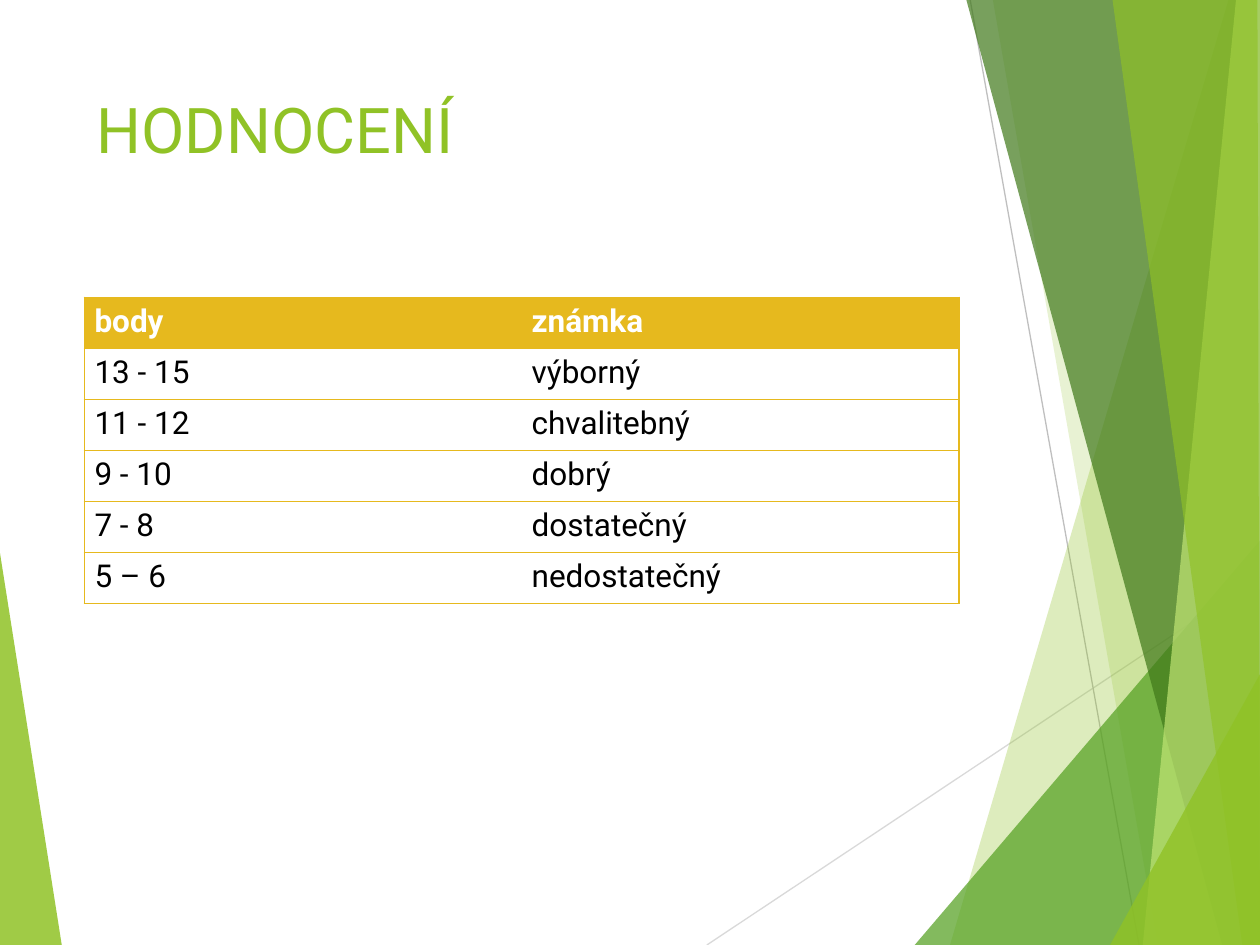
from lxml.etree import SubElement
from pptx import Presentation
from pptx.dml.color import RGBColor as Rgb
from pptx.enum.shapes import MSO_CONNECTOR as Connector
from pptx.enum.text import MSO_ANCHOR as Anchor
from pptx.oxml.ns import qn
from pptx.util import Inches, Pt

WIDTH, HEIGHT = 10, 7.5
COLUMNS, ROWS = 100, 75
COLORS = {
    "lime": "90C226",
    "green": "54A021",
    "forest": "3F7819",
    "pale": "C0E474",
    "silver": "D9D9D9",
    "gray": "BFBFBF",
    "gold": "E6B91E",
    "white": "FFFFFF",
    "black": "000000",
}
LEFT_SHARD = ("lime", 85, [(0, 43.9), (4.9, 75), (0, 75)])
RAYS = [
    ("silver", (56.1, 75), (100, 45.8)),
    ("gray", (77, 0), (90.4, 75)),
]
RIGHT_SHARDS = [
    ("lime", 30, [(97.5, 0), (75.4, 75), (100, 75), (100, 0)]),
    ("lime", 20, [(78.8, 0), (91.9, 75), (100, 75), (100, 0)]),
    ("green", 72, [(72.6, 75), (100, 42.9), (100, 75)]),
    ("forest", 70, [(76.7, 0), (97, 75), (100, 75), (100, 0)]),
    ("pale", 70, [(98.1, 0), (90.7, 75), (100, 75), (100, 0)]),
    ("lime", 65, [(88.3, 0), (98.6, 75), (100, 75), (99.8, 0)]),
    ("lime", 80, [(88.1, 75), (100, 53.5), (100, 75)]),
]
GRADES = [
    ("body", "známka"),
    ("13 - 15", "výborný"),
    ("11 - 12", "chvalitebný"),
    ("9 - 10", "dobrý"),
    ("7 - 8", "dostatečný"),
    ("5 – 6", "nedostatečný"),
]


def across(columns):
    """Return the length of a number of grid columns."""
    return Inches(WIDTH * columns / COLUMNS)


def down(rows):
    """Return the length of a number of grid rows."""
    return Inches(HEIGHT * rows / ROWS)


def color(name):
    """Return the named colour."""
    return Rgb.from_string(COLORS[name])


def apply(target, formats):
    """Set every attribute in a dict of format values."""
    for name, value in formats.items():
        setattr(target, name, value)


def write(para, text, color_name, size, bold=False):
    """Add one formatted span of text to a paragraph."""
    span = para.add_run()
    span.text = text
    apply(span.font, {"name": "Roboto", "size": Pt(size), "bold": bold})
    span.font.color.rgb = color(color_name)


def add_shard(page, color_name, opacity, corners):
    """Draw a translucent polygon."""
    points = [(across(x), down(y)) for x, y in corners]
    builder = page.shapes.build_freeform(*points[0])
    builder.add_line_segments(points[1:], close=True)
    shard = builder.convert_to_shape()
    shard.shadow.inherit = False
    shard.line.fill.background()
    shard.fill.solid()
    shard.fill.fore_color.rgb = color(color_name)
    tint = next(shard.element.spPr.iter(qn("a:srgbClr")))
    SubElement(tint, qn("a:alpha"), val=str(opacity * 1000))


def add_ray(page, color_name, start, end):
    """Draw a thin straight line."""
    ray = page.shapes.add_connector(
        Connector.STRAIGHT, across(start[0]), down(start[1]), across(end[0]), down(end[1])
    )
    ray.line.color.rgb = color(color_name)
    ray.line.width = Pt(0.75)
    SubElement(ray.element.spPr, qn("a:effectLst"))


def add_title(page, text):
    """Place the title in a top-anchored text box."""
    box = page.shapes.add_textbox(across(6.7), down(6.7), across(69.4), down(14.4))
    apply(box.text_frame, {"word_wrap": True, "vertical_anchor": Anchor.TOP})
    write(box.text_frame.paragraphs[0], text, "lime", 36)


def set_borders(cell, visible):
    """Draw gold lines on the visible sides and none on the others."""
    properties = cell._tc.get_or_add_tcPr()
    for side in "LRTB":
        line = SubElement(properties, qn(f"a:ln{side}"), w=str(Pt(1)))
        if side in visible:
            fill = SubElement(line, qn("a:solidFill"))
            SubElement(fill, qn("a:srgbClr"), val=COLORS["gold"])
        else:
            SubElement(line, qn("a:noFill"))


def add_grades(page, grades):
    """Build the table of points and grades."""
    count = len(grades[0])
    frame = page.shapes.add_table(
        len(grades), count, across(6.7), down(23.6), across(69.4), down(24.3)
    )
    table = frame.table
    table.horz_banding = False
    margins = {
        "margin_left": Inches(0.08),
        "margin_right": Inches(0.08),
        "margin_top": Inches(0.05),
        "margin_bottom": Inches(0.05),
    }
    for row, texts in enumerate(grades):
        header = row == 0
        for column, text in enumerate(texts):
            cell = table.cell(row, column)
            apply(cell, margins)
            set_borders(cell, "LTB" if column == 0 else "RTB")
            if header:
                cell.fill.solid()
                cell.fill.fore_color.rgb = color("gold")
            else:
                cell.fill.background()
            ink = "white" if header else "black"
            write(cell.text_frame.paragraphs[0], text, ink, 18, header)


def main():
    """Build the grading slide and save the deck."""
    deck = Presentation()
    apply(deck, {"slide_width": Inches(WIDTH), "slide_height": Inches(HEIGHT)})
    page = deck.slides.add_slide(deck.slide_layouts[6])
    add_shard(page, *LEFT_SHARD)
    for ray in RAYS:
        add_ray(page, *ray)
    for shard in RIGHT_SHARDS:
        add_shard(page, *shard)
    add_title(page, "HODNOCENÍ")
    add_grades(page, GRADES)
    deck.save("out.pptx")


if __name__ == "__main__":
    main()
